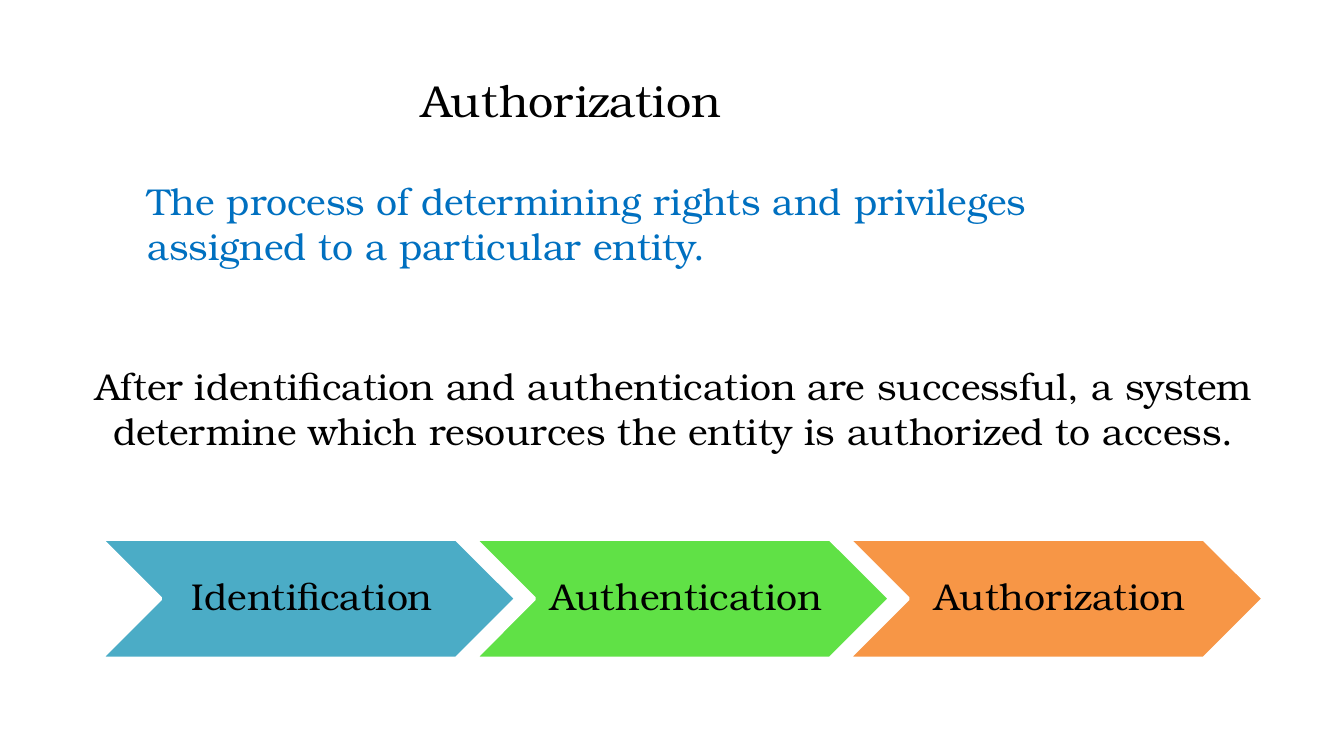
from pptx import Presentation
from pptx.dml.color import RGBColor
from pptx.enum.shapes import MSO_SHAPE
from pptx.enum.text import MSO_ANCHOR, PP_ALIGN
from pptx.util import Inches, Pt

WIDTH = 10
HEIGHT = WIDTH * 9 / 16
FONT = "TeX Gyre Bonum"
COLORS = {
    "black": "000000",
    "white": "FFFFFF",
    "blue": "0070C0",
    "teal": "4BACC6",
    "green": "60E146",
    "orange": "F79646",
}

TITLE = "Authorization"
DEFINITION = "The process of determining rights and privileges assigned to a particular entity."
EXPLANATION = (
    "After identification and authentication are successful, "
    "a system determine which resources the entity is authorized to access."
)
STEPS = [
    ("Identification", "teal"),
    ("Authentication", "green"),
    ("Authorization", "orange"),
]

STEP_LEFT, STEP_TOP = 0.075 * WIDTH, 4.01
STEP_WIDTH, STEP_HEIGHT = 3.09, 0.89
STEP_PITCH = 0.9 * STEP_WIDTH
LABEL_INDENT, LABEL_WIDTH = STEP_HEIGHT / 2, 2.2

deck = Presentation()
deck.slide_width, deck.slide_height = Inches(WIDTH), Inches(HEIGHT)
page = deck.slides.add_slide(deck.slide_layouts[6])


def color(name):
    return RGBColor.from_string(COLORS[name])


def add_text(text, area, size=20, ink="black", align=PP_ALIGN.CENTER,
             anchor=MSO_ANCHOR.MIDDLE, insets=(0.1, 0.05, 0.1, 0.05), spacing=1):
    box = page.shapes.add_textbox(*map(Inches, area))
    frame = box.text_frame
    frame.word_wrap = True
    frame.vertical_anchor = anchor
    (frame.margin_left, frame.margin_top,
     frame.margin_right, frame.margin_bottom) = map(Inches, insets)
    para = frame.paragraphs[0]
    para.alignment = align
    para.line_spacing = spacing
    span = para.add_run()
    span.text = text
    span.font.name = FONT
    span.font.size = Pt(size)
    span.font.color.rgb = color(ink)


def add_step(index, label, fill):
    left = STEP_LEFT + index * STEP_PITCH
    area = (left, STEP_TOP, STEP_WIDTH, STEP_HEIGHT)
    chevron = page.shapes.add_shape(MSO_SHAPE.CHEVRON, *map(Inches, area))
    chevron.shadow.inherit = False
    chevron.fill.solid()
    chevron.fill.fore_color.rgb = color(fill)
    chevron.line.color.rgb = color("white")
    chevron.line.width = Pt(2)
    add_text(label, (left + LABEL_INDENT, STEP_TOP, LABEL_WIDTH, STEP_HEIGHT),
             insets=(0.09, 0.03, 0.03, 0.03), spacing=0.9)


add_text(TITLE, (1, 0.54, 6.5, 0.75), size=24, anchor=MSO_ANCHOR.TOP,
         insets=(0.1, 0, 0.1, 0))
add_text(DEFINITION, (1, 1.28, 7.63, 0.98), ink="blue", align=PP_ALIGN.LEFT,
         anchor=MSO_ANCHOR.TOP)
add_text(EXPLANATION, (0.45, 2.99, 9.13, 0.75), anchor=MSO_ANCHOR.TOP,
         insets=(0.1, -0.29, 0.1, 0))
for index, (label, fill) in enumerate(STEPS):
    add_step(index, label, fill)

deck.save("out.pptx")
